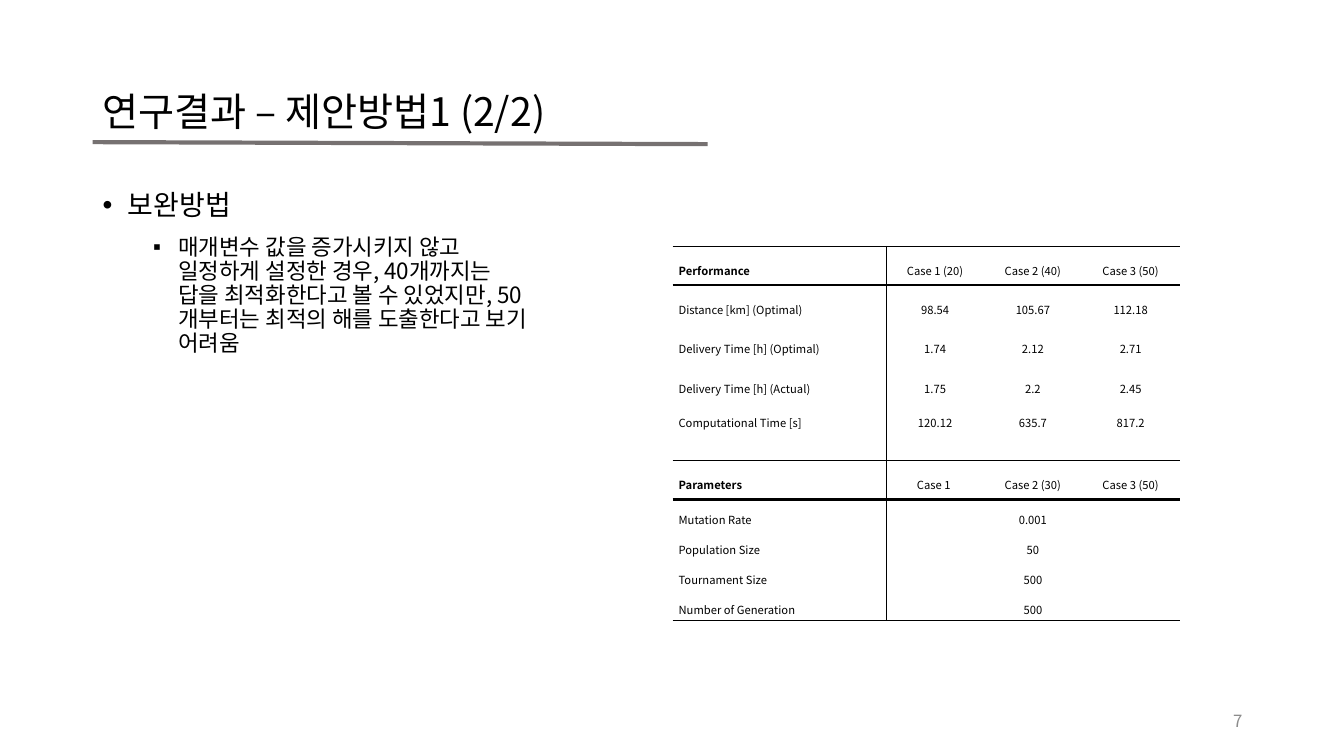
from lxml import etree
from pptx import Presentation
from pptx.dml.color import RGBColor
from pptx.enum.shapes import MSO_CONNECTOR
from pptx.enum.text import MSO_ANCHOR, MSO_AUTO_SIZE, PP_ALIGN
from pptx.oxml.ns import qn
from pptx.util import Inches, Pt

LEFT, CENTER, RIGHT = PP_ALIGN.LEFT, PP_ALIGN.CENTER, PP_ALIGN.RIGHT
MIDDLE, TOP = MSO_ANCHOR.MIDDLE, MSO_ANCHOR.TOP
FIXED_SIZE = MSO_AUTO_SIZE.NONE
STRAIGHT = MSO_CONNECTOR.STRAIGHT

SLIDE_WIDTH, SLIDE_HEIGHT = Inches(13.33), Inches(7.5)
FONT = "Noto Sans CJK KR"
COLORS = {"text": "000000", "rule": "767171", "number": "8C8C8C"}
NO_STYLE = "{2D5ABB26-0587-4C30-8999-92F81FD0307C}"
THIN, THICK = Pt(0.28), Pt(1.98)

TITLE = "연구결과 – 제안방법1 (2/2)"
METHOD = "보완방법"
FINDING = (
    "매개변수 값을 증가시키지 않고 일정하게 설정한 경우, 40개까지는 답을 "
    "최적화한다고 볼 수 있었지만, 50개부터는 최적의 해를 도출한다고 보기 어려움"
)
RESULTS = [
    ["Performance", "Case 1 (20)", "Case 2 (40)", "Case 3 (50)"],
    ["Distance [km] (Optimal)", "98.54", "105.67", "112.18"],
    ["Delivery Time [h] (Optimal)", "1.74", "2.12", "2.71"],
    ["Delivery Time [h] (Actual)", "1.75", "2.2", "2.45"],
    ["Computational Time [s]", "120.12", "635.7", "817.2"],
    ["", "", "", ""],
    ["Parameters", "Case 1 ", "Case 2 (30)", "Case 3 (50)"],
    ["Mutation Rate", "0.001"],
    ["Population Size", "50"],
    ["Tournament Size", "500"],
    ["Number of Generation", "500"],
]
HEADER_ROWS = (0, 6)
TALL_ROWS = (0, 1, 2, 3, 6)
ROW_EDGES = {0: THIN, 1: THICK, 6: THIN, 7: THICK, 11: THIN}
COLUMN_WIDTHS = (2.12, 0.97, 0.97, 0.97)


def across(percent):
    """Return a percentage of the slide width."""
    return round(SLIDE_WIDTH * percent / 100)


def down(percent):
    """Return a percentage of the slide height."""
    return round(SLIDE_HEIGHT * percent / 100)


def area(left, top, width, height):
    """Return a box given in percentages of the slide."""
    return across(left), down(top), across(width), down(height)


def write(paragraph, text, size, color="text", align=LEFT, spacing=1.0, bold=False):
    """Fill a paragraph and set its font for Latin and Korean text."""
    paragraph.text = text
    paragraph.alignment = align
    paragraph.line_spacing = spacing
    font = paragraph.font
    font.name, font.size, font.bold = FONT, Pt(size), bold
    font.color.rgb = RGBColor.from_string(COLORS[color])
    defaults = paragraph._p.pPr.find(qn("a:defRPr"))
    etree.SubElement(defaults, qn("a:ea"), typeface=FONT)
    if not text:
        etree.SubElement(paragraph._p, qn("a:endParaRPr"), sz=str(size * 100))


def add_bullet(paragraph, mark, indent):
    """Give a paragraph a bullet with a hanging indent."""
    paragraph.space_before = Pt(10)
    properties = paragraph._p.get_or_add_pPr()
    properties.set("marL", str(Inches(indent)))
    properties.set("indent", str(-Inches(0.25)))
    defaults = properties.find(qn("a:defRPr"))
    for tag, name, value in (("a:buFont", "typeface", "Arial"), ("a:buChar", "char", mark)):
        bullet = etree.Element(qn(tag))
        bullet.set(name, value)
        defaults.addprevious(bullet)


def set_frame(shape, anchor):
    """Make a text frame wrap at a fixed size and return it."""
    frame = shape.text_frame
    frame.word_wrap = True
    frame.auto_size = FIXED_SIZE
    frame.vertical_anchor = anchor
    return frame


def add_title(slide):
    """Place and fill the title placeholder."""
    title = slide.shapes.title
    title.left, title.top, title.width, title.height = area(6.9, 5.33, 86.25, 19.33)
    write(set_frame(title, MIDDLE).paragraphs[0], TITLE, 28, spacing=0.9)


def add_body(slide):
    """Add the bulleted finding."""
    body = slide.shapes.add_textbox(*area(6.9, 24.67, 33.75, 63.47))
    frame = set_frame(body, TOP)
    heading = frame.paragraphs[0]
    write(heading, METHOD, 20, spacing=0.9)
    add_bullet(heading, "•", 0.25)
    finding = frame.add_paragraph()
    finding.level = 1
    write(finding, FINDING, 16, spacing=0.9)
    add_bullet(finding, "▪", 0.75)


def set_borders(cell, widths):
    """Draw the given cell sides and hide the others."""
    properties = cell._tc.get_or_add_tcPr()
    for side in ("lnL", "lnR", "lnT", "lnB"):
        width = widths.get(side)
        line = etree.SubElement(properties, qn("a:" + side), w=str(width or 0))
        if width:
            fill = etree.SubElement(line, qn("a:solidFill"))
            etree.SubElement(fill, qn("a:srgbClr"), val=COLORS["text"])
        else:
            etree.SubElement(line, qn("a:noFill"))


def format_cell(cell, row, column):
    """Set the borders, fill and margins of a cell."""
    set_borders(cell, {
        "lnL": THIN if column == 1 else None,
        "lnR": THIN if column == 0 else None,
        "lnT": ROW_EDGES.get(row),
        "lnB": ROW_EDGES.get(row + 1),
    })
    cell.fill.background()
    cell.vertical_anchor = MIDDLE
    cell.margin_left = cell.margin_right = Inches(0.06)
    cell.margin_top = cell.margin_bottom = Inches(0.02)


def add_results(slide):
    """Add the table of performance and parameters."""
    frame = slide.shapes.add_table(
        len(RESULTS), len(COLUMN_WIDTHS), *area(50.04, 32.53, 37.73, 47.73))
    table = frame.table
    table.first_row = table.horz_banding = False
    table._tbl.tblPr.find(qn("a:tableStyleId")).text = NO_STYLE
    for column, width in zip(table.columns, COLUMN_WIDTHS):
        column.width = Inches(width)
    for row, values in enumerate(RESULTS):
        table.rows[row].height = Inches(0.39 if row in TALL_ROWS else 0.27)
        for column in range(len(COLUMN_WIDTHS)):
            cell = table.cell(row, column)
            format_cell(cell, row, column)
            text = values[column] if column < len(values) else ""
            write(cell.text_frame.paragraphs[0], text, 8,
                  align=CENTER if column else LEFT,
                  spacing=1.6 if text else 1.0,
                  bold=row in HEADER_ROWS and column == 0)
        if len(values) == 2:
            table.cell(row, 1).merge(table.cell(row, 3))


def add_title_rule(slide):
    """Draw the line under the title."""
    rule = slide.shapes.add_connector(
        STRAIGHT, across(6.9), down(18.8), across(52.66), down(19.07))
    rule.line.color.rgb = RGBColor.from_string(COLORS["rule"])
    rule.line.width = Pt(3)
    etree.SubElement(rule._element.spPr, qn("a:effectLst"))


def add_page_number(slide):
    """Add the page number at the lower right."""
    number = slide.shapes.add_textbox(*area(70.67, 92.67, 22.51, 5.33))
    write(set_frame(number, MIDDLE).paragraphs[0], "7", 12, "number", RIGHT)


def main():
    """Build the slide and save it."""
    presentation = Presentation()
    presentation.slide_width, presentation.slide_height = SLIDE_WIDTH, SLIDE_HEIGHT
    slide = presentation.slides.add_slide(presentation.slide_layouts[5])
    add_title(slide)
    add_body(slide)
    add_results(slide)
    add_title_rule(slide)
    add_page_number(slide)
    presentation.save("out.pptx")


if __name__ == "__main__":
    main()
